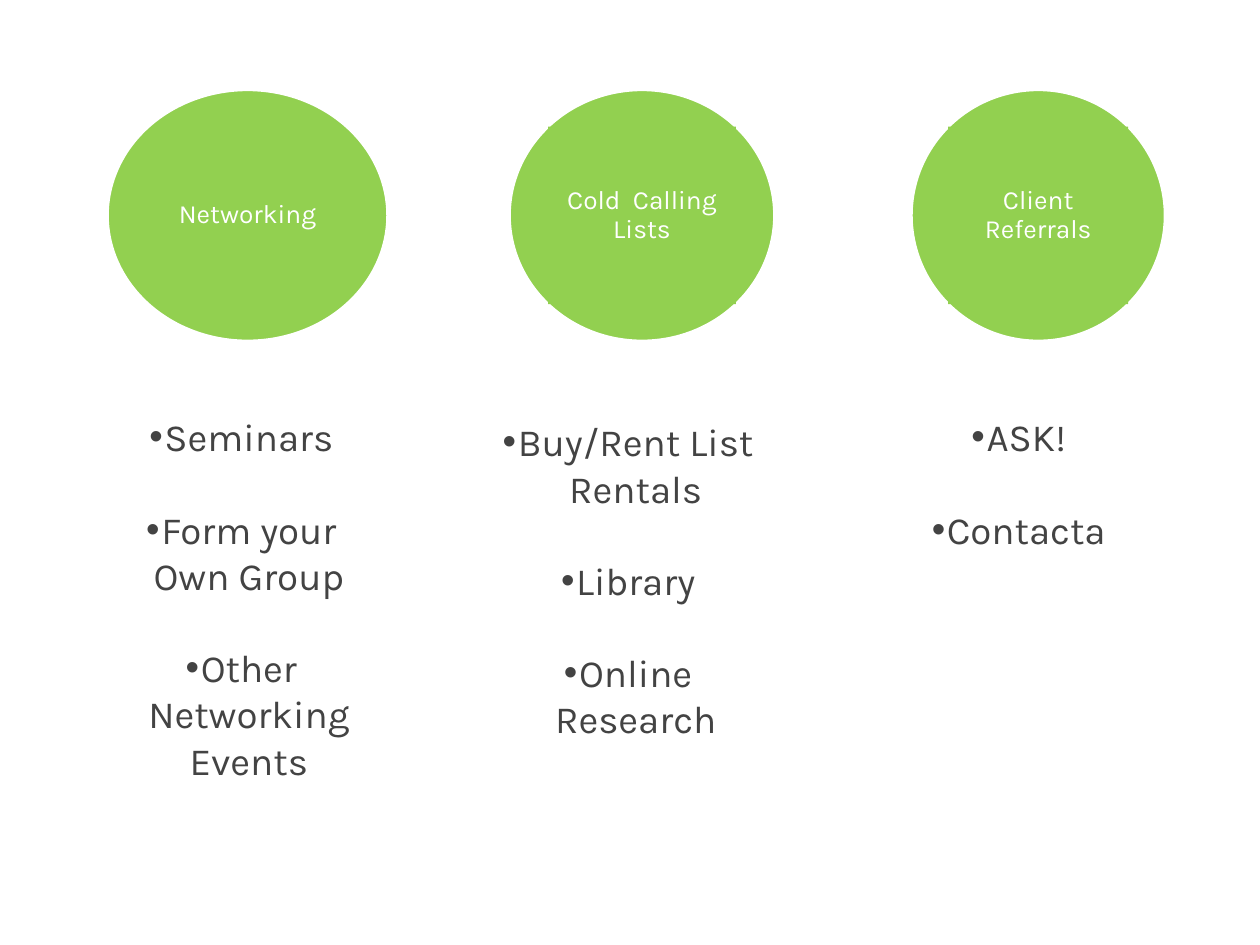
from lxml import etree
from pptx import Presentation
from pptx.dml.color import RGBColor
from pptx.enum.shapes import MSO_SHAPE
from pptx.enum.text import MSO_ANCHOR, MSO_AUTO_SIZE, PP_ALIGN
from pptx.oxml.ns import qn
from pptx.util import Inches, Pt

GREEN = RGBColor(0x92, 0xD0, 0x50)
WHITE = RGBColor(0xFF, 0xFF, 0xFF)
GRAY = RGBColor(0x43, 0x43, 0x43)
ELLIPSE, RECTANGLE = MSO_SHAPE.OVAL, MSO_SHAPE.RECTANGLE
CENTER, MIDDLE, TOP = PP_ALIGN.CENTER, MSO_ANCHOR.MIDDLE, MSO_ANCHOR.TOP
NO_AUTOFIT = MSO_AUTO_SIZE.NONE

COMPARISON_LAYOUT = 4
COLUMNS, ROWS = 100, 75
CIRCLE_TOP, CIRCLE_HEIGHT = 7.1, 20
LIST_WIDTH = 23.3

# Circle: left, width; label: width, height; list: left, top, height
TOPICS = [
    {"label": "Networking", "circle": (8.5, 22.3), "text": (16.6, 12.2),
     "list": (7.5, 32.3, 45.4),
     "items": ["Seminars", "Form your Own Group", "Other Networking Events"]},
    {"label": "Cold  Calling Lists", "circle": (40.4, 21.1), "text": (14.9, 14.1),
     "list": (38.2, 32.7, 41.7),
     "items": ["Buy/Rent List Rentals", "Library", "Online Research"]},
    {"label": "Client Referrals", "circle": (72.3, 20.2), "text": (14.3, 14.1),
     "list": (69.2, 32.3, 26.9),
     "items": ["ASK!", "Contacta"]},
]


def set_values(target, values):
    for name, value in values.items():
        setattr(target, name, value)


class SlideBuilder:
    label_font = {"name": "Karla", "size": Pt(15), "bold": False}
    list_font = {"name": "Karla", "size": Pt(22), "bold": False}
    label_frame = {"word_wrap": True, "vertical_anchor": MIDDLE,
                   **{f"margin_{side}": Inches(0.01)
                      for side in ("left", "top", "right", "bottom")}}
    list_frame = {"word_wrap": True, "vertical_anchor": TOP, "auto_size": NO_AUTOFIT}
    label_paragraph = {"alignment": CENTER, "line_spacing": 0.9}
    list_paragraph = {"alignment": CENTER, "space_after": Pt(0)}
    item_gap = Pt(26.4)
    hanging_indent = Inches(0.12)

    def __init__(self, presentation):
        self.cell_width = presentation.slide_width / COLUMNS
        self.cell_height = presentation.slide_height / ROWS
        layout = presentation.slide_layouts[COMPARISON_LAYOUT]
        self.slide = presentation.slides.add_slide(layout)
        self.bodies = iter(list(self.slide.placeholders)[1:])

    def box(self, left, top, width, height):
        return (round(left * self.cell_width), round(top * self.cell_height),
                round(width * self.cell_width), round(height * self.cell_height))

    def add_text(self, paragraph, text, paragraph_format, font_format, color):
        set_values(paragraph, paragraph_format)
        run = paragraph.add_run()
        run.text = text
        set_values(run.font, font_format)
        run.font.color.rgb = color

    def filled_shape(self, group, kind, *cells):
        shape = group.shapes.add_shape(kind, *self.box(*cells))
        shape.shadow.inherit = False
        shape.fill.solid()
        shape.fill.fore_color.rgb = GREEN
        return shape

    def circle(self, text, left, width, text_width, text_height):
        group = self.slide.shapes.add_group_shape()
        ellipse = self.filled_shape(group, ELLIPSE, left, CIRCLE_TOP,
                                    width, CIRCLE_HEIGHT)
        ellipse.line.color.rgb = WHITE
        ellipse.line.width = Pt(2)

        # The label is centred on its circle
        label = self.filled_shape(group, RECTANGLE,
                                  left + (width - text_width) / 2,
                                  CIRCLE_TOP + (CIRCLE_HEIGHT - text_height) / 2,
                                  text_width, text_height)
        label.line.fill.background()
        set_values(label.text_frame, self.label_frame)
        self.add_text(label.text_frame.paragraphs[0], text,
                      self.label_paragraph, self.label_font, WHITE)

    def bullet_list(self, items, left, top, height):
        body = next(self.bodies)
        position = self.box(left, top, LIST_WIDTH, height)
        set_values(body, dict(zip(("left", "top", "width", "height"), position)))
        frame = body.text_frame
        set_values(frame, self.list_frame)
        for index, item in enumerate(items):
            paragraph = frame.add_paragraph() if index else frame.paragraphs[0]
            self.add_text(paragraph, item, self.list_paragraph, self.list_font, GRAY)
            paragraph.space_before = self.item_gap if index else Pt(0)
            self.add_bullet(paragraph)

    def add_bullet(self, paragraph):
        properties = paragraph._p.get_or_add_pPr()
        properties.set("marL", str(self.hanging_indent))
        properties.set("indent", str(-self.hanging_indent))
        etree.SubElement(properties, qn("a:buChar"), char="•")

    def remove_empty_placeholders(self):
        for placeholder in list(self.slide.placeholders):
            if not placeholder.text_frame.text:
                placeholder._element.getparent().remove(placeholder._element)


def main():
    presentation = Presentation()
    presentation.slide_width = Inches(10)
    presentation.slide_height = Inches(7.5)
    builder = SlideBuilder(presentation)

    # One circle with its list per topic
    for topic in TOPICS:
        builder.circle(topic["label"], *topic["circle"], *topic["text"])
        builder.bullet_list(topic["items"], *topic["list"])

    builder.remove_empty_placeholders()
    presentation.save("out.pptx")


if __name__ == "__main__":
    main()
